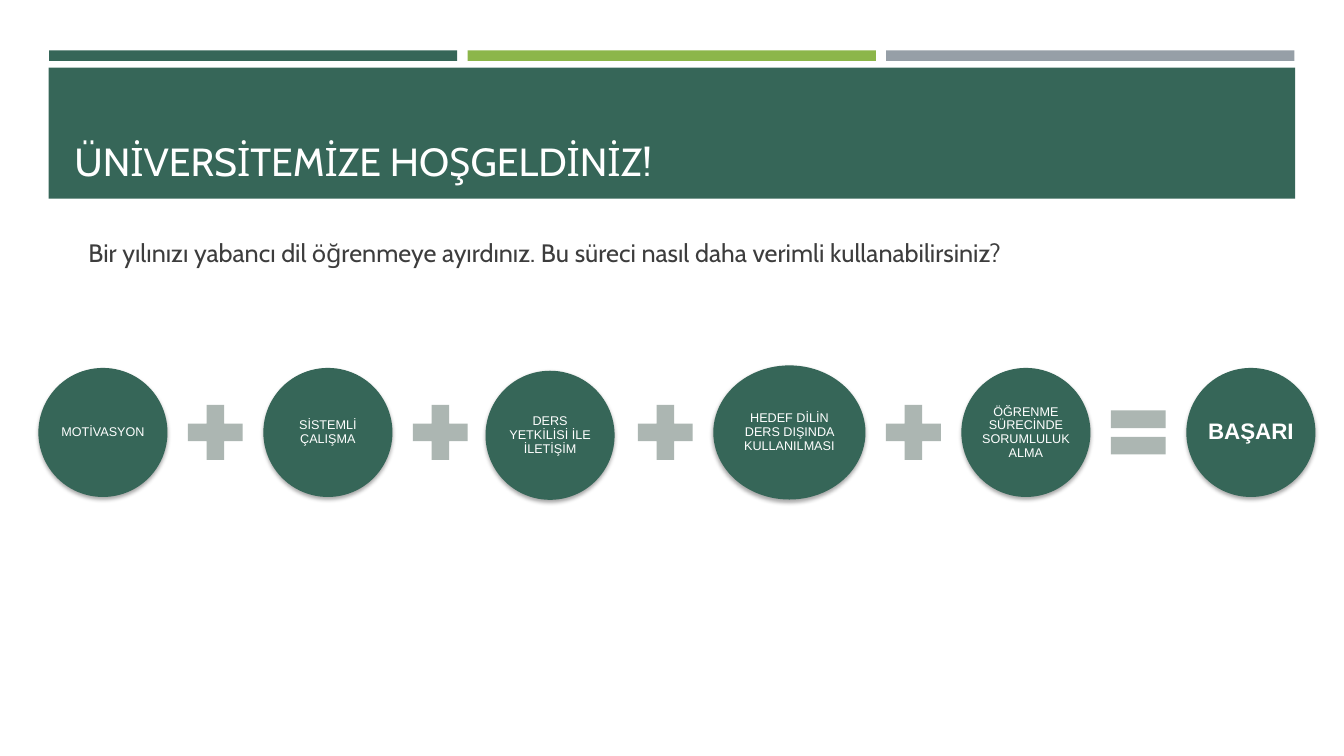
import pptx
import pptx.util
import pptx.dml.color
import pptx.enum.shapes
import pptx.enum.text
import pptx.oxml
from pptx.util import Pt

SHAPES = pptx.enum.shapes.MSO_SHAPE
ANCHOR = pptx.enum.text.MSO_ANCHOR
ALIGN = pptx.enum.text.PP_ALIGN

GREEN, LIME, GREY = "366658", "8CB64A", "969FA7"
SAGE, WHITE, DARK = "ACB6B2", "FFFFFF", "3D3D3D"

ROW_CENTRE = 308.9
ROW_LEFT = 27.4
GAP = 7.6
CIRCLE = 92.2
OPERATOR = 53.3

# text, width, height, horizontal and vertical nudge, font size
STEPS = [
    ("MOTİVASYON", CIRCLE, CIRCLE, 0, 0, 9),
    ("SİSTEMLİ ÇALIŞMA", CIRCLE, CIRCLE, 0, 0, 9),
    ("DERS YETKİLİSİ İLE İLETİŞİM", CIRCLE, CIRCLE, -2, 2, 9),
    ("HEDEF DİLİN DERS DIŞINDA KULLANILMASI", 108.7, 95.8, 0, 0, 9),
    ("ÖĞRENME SÜRECİNDE SORUMLULUK ALMA", CIRCLE, CIRCLE, 0, 0, 9),
    ("BAŞARI", CIRCLE, CIRCLE, 0, 0, 16),
]

SHADOW = (
    '<a:effectLst xmlns:a="http://schemas.openxmlformats.org/drawingml/2006/main">'
    '<a:outerShdw blurRad="{}" dist="{}" dir="5400000" algn="ctr" rotWithShape="0">'
    '<a:srgbClr val="000000"><a:alpha val="35000"/></a:srgbClr>'
    "</a:outerShdw></a:effectLst>"
).format(Pt(3.1), Pt(1.8))


def colour(value):
    return pptx.dml.color.RGBColor.from_string(value)


def add_filled_shape(slide, kind, left, top, width, height, fill):
    shape = slide.shapes.add_shape(kind, Pt(left), Pt(top), Pt(width), Pt(height))
    shape.shadow.inherit = False
    shape.fill.solid()
    shape.fill.fore_color.rgb = colour(fill)
    shape.line.fill.background()
    return shape


def write_text(shape, text, font, size, fill, align, anchor, margins, bold=False):
    """Set one run of text; margins are horizontal and vertical points."""
    frame = shape.text_frame
    frame.word_wrap = True
    frame.auto_size = pptx.enum.text.MSO_AUTO_SIZE.NONE
    frame.vertical_anchor = anchor
    frame.margin_left = frame.margin_right = Pt(margins[0])
    frame.margin_top = frame.margin_bottom = Pt(margins[1])
    paragraph = frame.paragraphs[0]
    paragraph.alignment = align
    run = paragraph.add_run()
    run.text = text
    run.font.name = font
    run.font.size = Pt(size)
    run.font.bold = bold
    run.font.color.rgb = colour(fill)
    return paragraph


def add_header(slide):
    for index, fill in enumerate((GREEN, LIME, GREY)):
        add_filled_shape(slide, SHAPES.RECTANGLE, 35 + index * 299, 36, 291.6, 7.5, fill)
    add_filled_shape(slide, SHAPES.RECTANGLE, 34.8, 48.4, 890.4, 93.6, GREEN)


def format_title(slide, text):
    title = slide.shapes.title
    title.left, title.top, title.width, title.height = Pt(46), Pt(55.4), Pt(868.3), Pt(80)
    write_text(title, text, "Cabin", 28, WHITE, ALIGN.LEFT, ANCHOR.BOTTOM, (7.2, 3.6))
    # Bring the title in front of the banner
    slide.shapes._spTree.append(title._element)


def add_body(slide, text):
    box = slide.shapes.add_textbox(Pt(56.1), Pt(165), Pt(858.2), Pt(30))
    write_text(box, text, "Cabin", 18, DARK, ALIGN.LEFT, ANCHOR.MIDDLE, (7.2, 3.6))


def add_circle(slide, left, text, width, height, nudge_x, nudge_y, size):
    top = ROW_CENTRE - height / 2 + nudge_y
    circle = add_filled_shape(slide, SHAPES.OVAL, left + nudge_x, top, width, height, GREEN)
    properties = circle._element.spPr
    properties.replace(properties.effectLst, pptx.oxml.parse_xml(SHADOW))
    paragraph = write_text(circle, text, "Arial", size, WHITE, ALIGN.CENTER,
                           ANCHOR.MIDDLE, (0.8, 0.8), bold=size > 9)
    paragraph.line_spacing = 0.9


def add_operator(slide, kind, left):
    operator = add_filled_shape(slide, kind, left, ROW_CENTRE - OPERATOR / 2,
                                OPERATOR, OPERATOR, SAGE)
    operator.adjustments[0] = 0.235
    if kind == SHAPES.MATH_EQUAL:
        operator.adjustments[1] = 0.118


def add_equation(slide):
    """Lay circles and operators out from left to right with equal gaps."""
    left = ROW_LEFT
    last = len(STEPS) - 1
    for index, (text, width, *details) in enumerate(STEPS):
        add_circle(slide, left, text, width, *details)
        left += width + GAP
        if index < last:
            kind = SHAPES.MATH_EQUAL if index == last - 1 else SHAPES.MATH_PLUS
            add_operator(slide, kind, left)
            left += OPERATOR + GAP


def main():
    presentation = pptx.Presentation()
    presentation.slide_width, presentation.slide_height = Pt(960), Pt(540)
    slide = presentation.slides.add_slide(presentation.slide_layouts[5])
    add_header(slide)
    format_title(slide, "ÜNİVERSİTEMİZE HOŞGELDİNİZ!")
    add_body(slide, "Bir yılınızı yabancı dil öğrenmeye ayırdınız. "
                    "Bu süreci nasıl daha verimli kullanabilirsiniz?")
    add_equation(slide)
    presentation.save("out.pptx")


if __name__ == "__main__":
    main()
